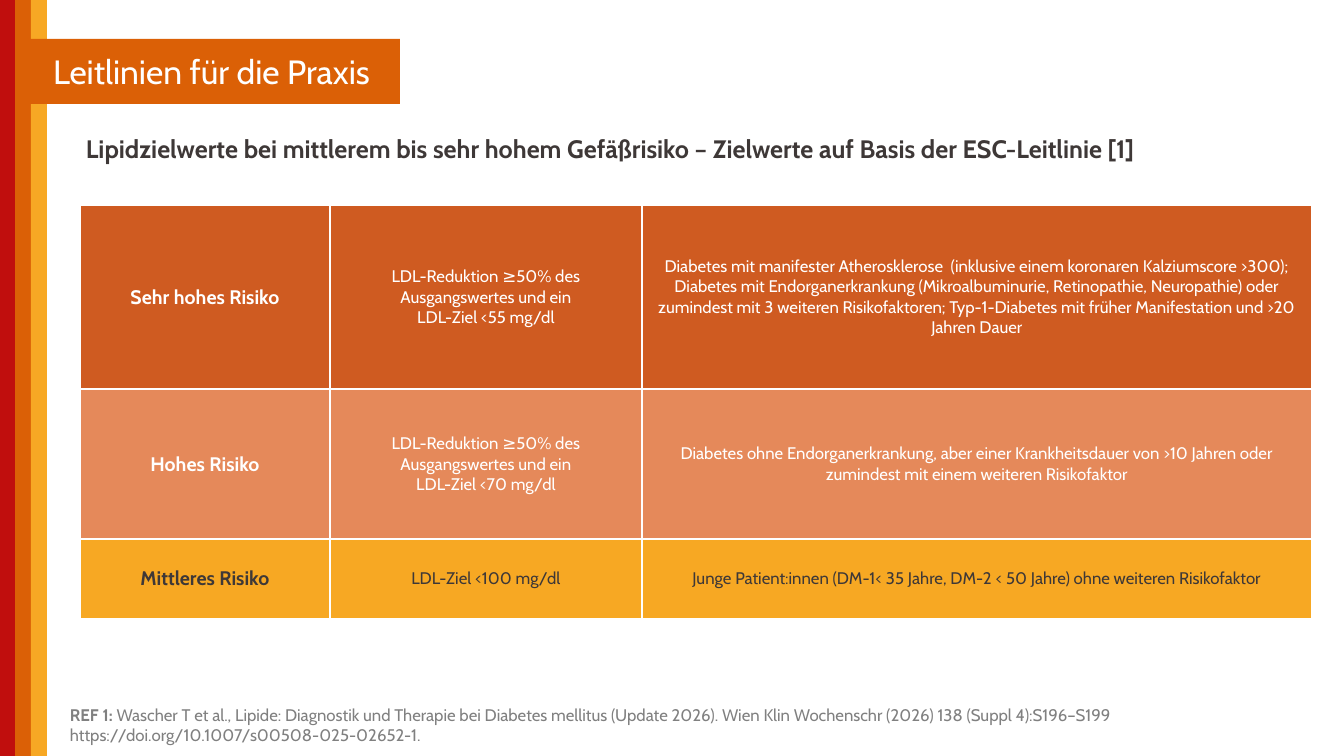
from lxml import etree
from pptx import Presentation
from pptx import util as u
from pptx.dml.color import RGBColor
from pptx.enum import shapes, text
from pptx.oxml.ns import qn

EMU_PER_PX = 914400 / 100.8
WHITE, DARK, GREY = "FFFFFF", "3E3837", "808080"
RED, ORANGE, YELLOW = "C00E0D", "DB6006", "F7A824"


def px(length):
    return u.Emu(round(length * EMU_PER_PX))


def rgb(value):
    return RGBColor.from_string(value)


class Slide:
    font = "Cabin"

    def __init__(self, deck):
        self.page = deck.slides.add_slide(deck.slide_layouts[6])

    def style(self, para, size, color, bold=None, align=None):
        para.alignment = align
        para.font.name = self.font
        para.font.size = u.Pt(size)
        para.font.bold = bold
        para.font.color.rgb = rgb(color)

    def bar(self, left, top, width, height, color):
        box = self.page.shapes.add_shape(
            shapes.MSO_SHAPE.RECTANGLE, *map(px, (left, top, width, height)))
        box.shadow.inherit = False
        box.fill.solid()
        box.fill.fore_color.rgb = rgb(color)
        box.line.fill.background()
        return box

    def banner(self, left, top, width, height, words):
        frame = self.bar(left, top, width, height, ORANGE).text_frame
        frame.vertical_anchor = text.MSO_ANCHOR.MIDDLE
        frame.text = words
        self.style(frame.paragraphs[0], 24, WHITE, align=text.PP_ALIGN.CENTER)

    def heading(self, left, top, width, height, words):
        frame = self.page.shapes.add_textbox(*map(px, (left, top, width, height))).text_frame
        frame.word_wrap = True
        frame.text = words
        para = frame.paragraphs[0]
        para.line_spacing = 0.9
        self.style(para, 18, DARK, True)

    def table(self, left, top, widths, heights):
        table = self.page.shapes.add_table(
            len(heights), len(widths), px(left), px(top),
            px(sum(widths)), px(sum(heights))).table
        table.first_row = table.horz_banding = False
        for column, width in zip(table.columns, widths):
            column.width = px(width)
        for row, height in zip(table.rows, heights):
            row.height = px(height)
        return table

    def cell(self, cell, words, fill, size, color, bold):
        properties = cell._tc.get_or_add_tcPr()
        for side in ("lnL", "lnR", "lnT", "lnB"):
            line = etree.SubElement(properties, qn("a:" + side), w=str(u.Pt(1)))
            solid = etree.SubElement(line, qn("a:solidFill"))
            etree.SubElement(solid, qn("a:srgbClr"), val=WHITE)
        cell.fill.solid()
        cell.fill.fore_color.rgb = rgb(fill)
        cell.vertical_anchor = text.MSO_ANCHOR.MIDDLE
        cell.text = words
        for para in cell.text_frame.paragraphs:
            self.style(para, size, color, bold, text.PP_ALIGN.CENTER)

    def reference(self, left, top, width, height, label, citation, link):
        cell = self.table(left, top, [width], [height]).cell(0, 0)
        cell.fill.background()
        cell.margin_left = cell.margin_right = px(15)
        cell.margin_top = cell.margin_bottom = px(15)
        first = cell.text_frame.paragraphs[0]
        span = first.add_run()
        span.text = label
        span.font.bold = True
        first.add_run().text = citation
        second = cell.text_frame.add_paragraph()
        second.text = link
        for para in (first, second):
            self.style(para, 12, GREY, False)


REDUCTION = "LDL-Reduktion ≥50% des Ausgangswertes und ein\n"
RISKS = [
    ("CF5B21", WHITE, "Sehr hohes Risiko", REDUCTION + "LDL-Ziel <55 mg/dl",
     "Diabetes mit manifester Atherosklerose  (inklusive einem koronaren Kalziumscore >300); "
     "Diabetes mit Endorganerkrankung (Mikroalbuminurie, Retinopathie, Neuropathie) oder "
     "zumindest mit 3 weiteren Risikofaktoren; Typ-1-Diabetes mit früher Manifestation "
     "und >20 Jahren Dauer"),
    ("E5895A", WHITE, "Hohes Risiko", REDUCTION + "LDL-Ziel <70 mg/dl",
     "Diabetes ohne Endorganerkrankung, aber einer Krankheitsdauer von >10 Jahren oder "
     "zumindest mit einem weiteren Risikofaktor"),
    ("F7A823", DARK, "Mittleres Risiko", "LDL-Ziel <100 mg/dl",
     "Junge Patient:innen (DM-1< 35 Jahre, DM-2 < 50 Jahre) ohne weiteren Risikofaktor"),
]


def main():
    deck = Presentation()
    deck.slide_width, deck.slide_height = px(1344), px(756)
    slide = Slide(deck)

    # Side stripes and title
    for left, width, color in ((0, 15, RED), (15, 16, ORANGE), (31, 16, YELLOW)):
        slide.bar(left, 0, width, 756, color)
    slide.banner(23, 39, 377, 65, "Leitlinien für die Praxis")

    # Risk table
    table = slide.table(80, 205, [250, 312, 670], [184, 150, 80])
    for row, (fill, color, *columns) in enumerate(RISKS):
        for column, words in enumerate(columns):
            is_name = column == 0
            slide.cell(table.cell(row, column), words, fill,
                       14 if is_name else 12, color, is_name)

    # Heading and reference
    slide.heading(76, 132, 1231, 48,
                  "Lipidzielwerte bei mittlerem bis sehr hohem Gefäßrisiko – "
                  "Zielwerte auf Basis der ESC-Leitlinie [1]")
    slide.reference(55, 690, 1234, 48, "REF 1: ",
                    "Wascher T et al., Lipide: Diagnostik und Therapie bei Diabetes mellitus "
                    "(Update 2026). Wien Klin Wochenschr (2026) 138 (Suppl 4):S196–S199",
                    "https://doi.org/10.1007/s00508-025-02652-1.")

    deck.save("out.pptx")


if __name__ == "__main__":
    main()
